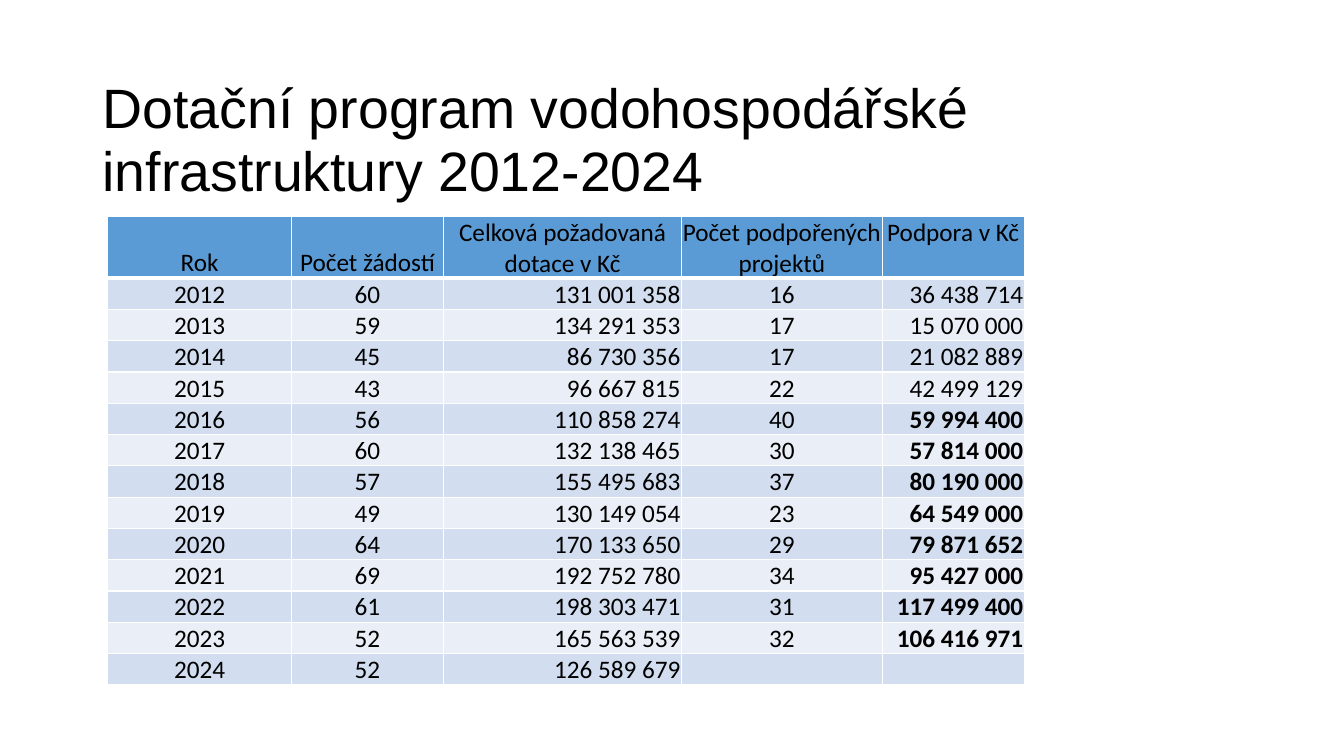
from lxml import etree
from pptx import Presentation
from pptx.dml.color import RGBColor
from pptx.enum import text
from pptx.oxml import ns
from pptx.util import Inches, Pt

TITLE = "Dotační program vodohospodářské infrastruktury 2012-2024"
HEADER = ("Rok", "Počet žádostí", "Celková požadovaná dotace v Kč",
          "Počet podpořených projektů", "Podpora v Kč")
YEARS = [
    ("2012", "60", "131 001 358", "16", "36 438 714"),
    ("2013", "59", "134 291 353", "17", "15 070 000"),
    ("2014", "45", "86 730 356", "17", "21 082 889"),
    ("2015", "43", "96 667 815", "22", "42 499 129"),
    ("2016", "56", "110 858 274", "40", "59 994 400"),
    ("2017", "60", "132 138 465", "30", "57 814 000"),
    ("2018", "57", "155 495 683", "37", "80 190 000"),
    ("2019", "49", "130 149 054", "23", "64 549 000"),
    ("2020", "64", "170 133 650", "29", "79 871 652"),
    ("2021", "69", "192 752 780", "34", "95 427 000"),
    ("2022", "61", "198 303 471", "31", "117 499 400"),
    ("2023", "52", "165 563 539", "32", "106 416 971"),
    ("2024", "52", "126 589 679", "", ""),
]
COL_WIDTHS = (1.82, 1.51, 2.36, 1.99, 1.41)
HEADER_HEIGHT, ROW_HEIGHT = 0.6, 0.31
AMOUNT_COLS, SUPPORT_COL = (2, 4), 4
FIRST_BOLD_YEAR = "2016"

BLACK = RGBColor(0x00, 0x00, 0x00)
WHITE = RGBColor(0xFF, 0xFF, 0xFF)
HEADER_BLUE = RGBColor(0x5B, 0x9B, 0xD5)
BANDS = (RGBColor(0xEA, 0xEF, 0xF7), RGBColor(0xD2, 0xDE, 0xEF))

TITLE_FONT = {"name": "Arial", "size": Pt(39.6)}
CELL_FONT = {"name": "Calibri", "size": Pt(18)}
CELL_FORMAT = {"margin_left": Inches(0.01), "margin_right": Inches(0.01),
               "margin_top": Inches(0.01), "margin_bottom": 0}


def set_all(obj, values):
    for name, value in values.items():
        setattr(obj, name, value)


def set_borders(cell, widths):
    tc_pr = cell._tc.get_or_add_tcPr()
    for side, width in widths.items():
        ln = etree.SubElement(tc_pr, ns.qn("a:ln" + side), w=str(Pt(width)))
        fill = etree.SubElement(ln, ns.qn("a:solidFill"))
        etree.SubElement(fill, ns.qn("a:srgbClr"), val=str(WHITE))


def add_title(s):
    tf = s.shapes.add_textbox(Inches(0.92), Inches(0.4), Inches(11.5), Inches(1.65)).text_frame
    set_all(tf, {"word_wrap": True, "vertical_anchor": text.MSO_ANCHOR.BOTTOM,
                 "margin_bottom": Inches(0.03)})
    p = tf.paragraphs[0]
    p.line_spacing = 0.94
    r = p.add_run()
    r.text = TITLE
    set_all(r.font, TITLE_FONT)
    r.font.color.rgb = BLACK


def fill_cell(cell, row, col, value):
    header = row == 0
    set_all(cell, CELL_FORMAT)
    top_aligned = header and col == SUPPORT_COL
    cell.vertical_anchor = text.MSO_ANCHOR.TOP if top_aligned else text.MSO_ANCHOR.BOTTOM
    set_borders(cell, {"L": 1, "R": 1, "T": 3 if row == 1 else 1, "B": 3 if header else 1})
    cell.fill.solid()
    cell.fill.fore_color.rgb = HEADER_BLUE if header else BANDS[row % 2]
    p = cell.text_frame.paragraphs[0]
    right = not header and col in AMOUNT_COLS
    p.alignment = text.PP_ALIGN.RIGHT if right else text.PP_ALIGN.CENTER
    if value:
        r = p.add_run()
        r.text = value
        set_all(r.font, CELL_FONT)
        r.font.bold = not header and col == SUPPORT_COL and YEARS[row - 1][0] >= FIRST_BOLD_YEAR
        r.font.color.rgb = BLACK


def add_grants_table(s):
    rows = [HEADER] + YEARS
    height = HEADER_HEIGHT + ROW_HEIGHT * len(YEARS)
    table = s.shapes.add_table(len(rows), len(HEADER), Inches(1.07), Inches(2.15),
                               Inches(sum(COL_WIDTHS)), Inches(height)).table
    for column, width in zip(table.columns, COL_WIDTHS):
        column.width = Inches(width)
    for i, values in enumerate(rows):
        table.rows[i].height = Inches(ROW_HEIGHT if i else HEADER_HEIGHT)
        for j, value in enumerate(values):
            fill_cell(table.cell(i, j), i, j, value)


def main():
    prs = Presentation()
    prs.slide_width, prs.slide_height = Inches(13.33), Inches(7.5)
    s = prs.slides.add_slide(prs.slide_layouts[6])
    add_title(s)
    add_grants_table(s)
    prs.save("out.pptx")


if __name__ == "__main__":
    main()
